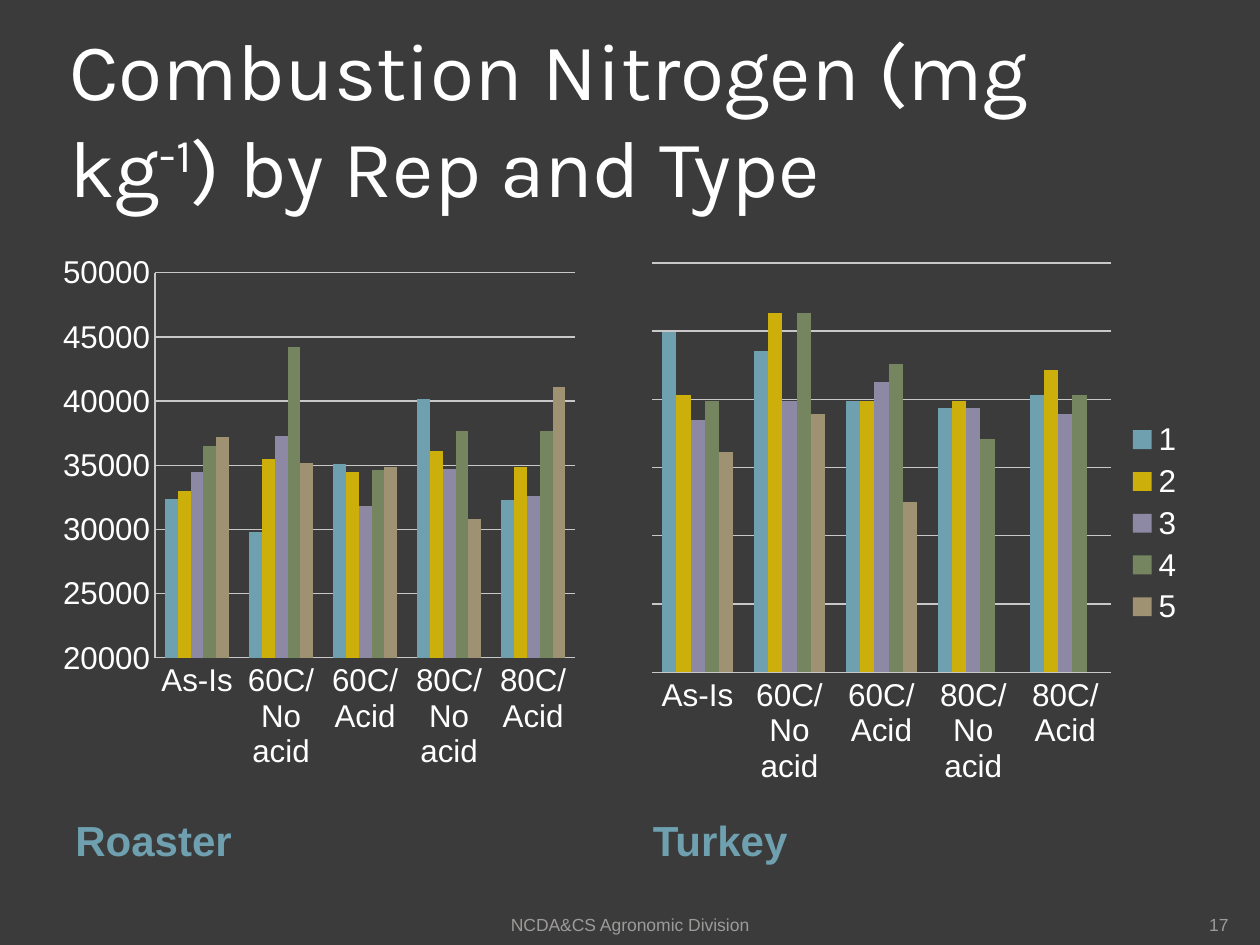
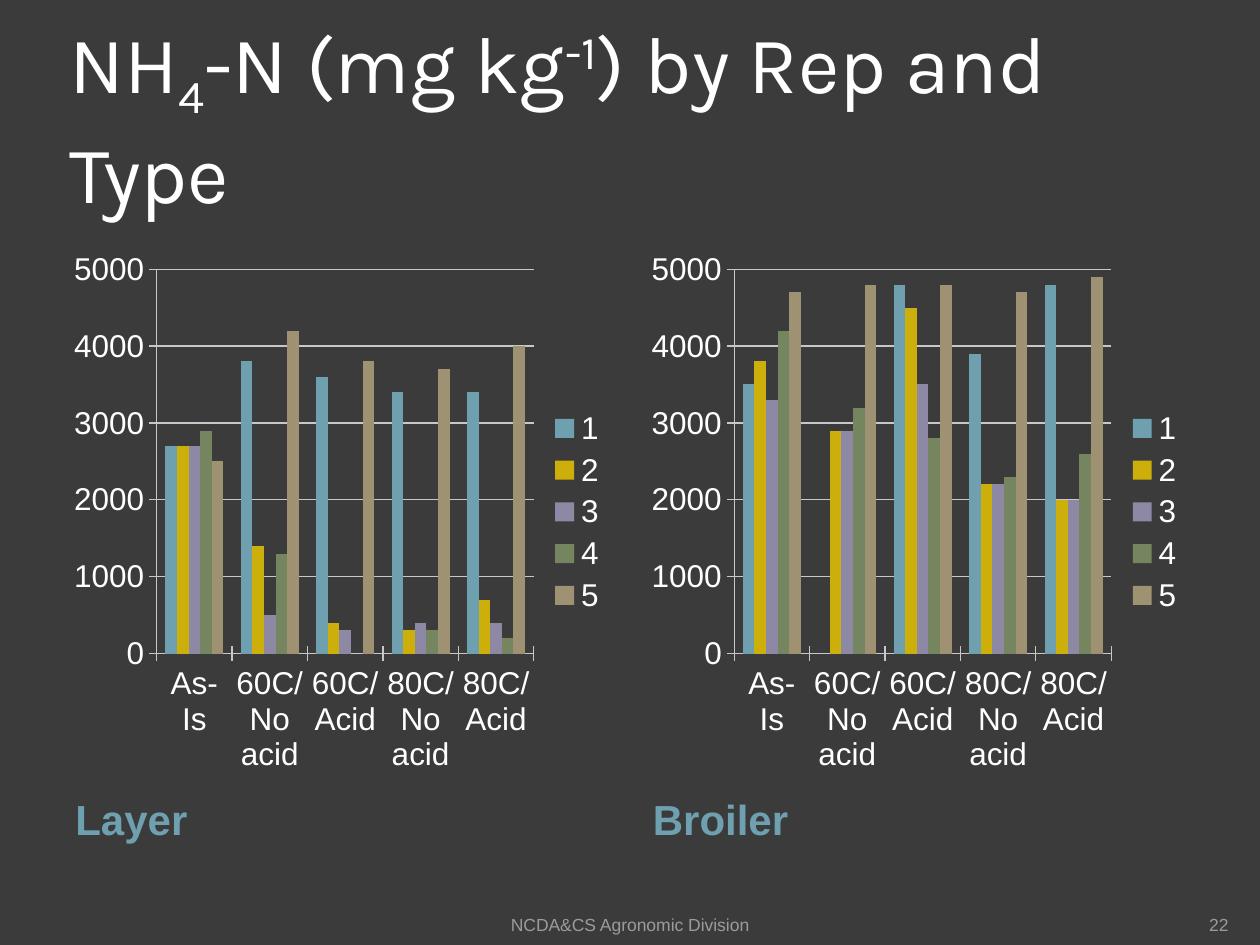
from lxml import etree
from pptx import Presentation
from pptx.chart.data import CategoryChartData
from pptx.dml.color import RGBColor
from pptx.enum.chart import XL_CHART_TYPE, XL_LEGEND_POSITION, XL_TICK_MARK
from pptx.enum.text import MSO_ANCHOR, PP_ALIGN
from pptx.util import Pt

COLUMNS = XL_CHART_TYPE.COLUMN_CLUSTERED
RIGHT_LEGEND = XL_LEGEND_POSITION.RIGHT
NO_TICK, CROSS = XL_TICK_MARK.NONE, XL_TICK_MARK.CROSS
TOP, MIDDLE, BOTTOM = MSO_ANCHOR.TOP, MSO_ANCHOR.MIDDLE, MSO_ANCHOR.BOTTOM
LEFT, CENTER, RIGHT = PP_ALIGN.LEFT, PP_ALIGN.CENTER, PP_ALIGN.RIGHT

BACK, WHITE, GREY, GRID = "3B3B3B", "FFFFFF", "9D9B9A", "C8C8C8"
REPS = ["6EA0B0", "CCAF0A", "8D89A4", "748560", "9E9273"]
TREATS = ["As-Is", "60C/No acid", "60C/Acid", "80C/No acid", "80C/Acid"]
COLS = (36, 366)
WIDTH = 318
CHART_H = 310

# One row per rep, one value per treatment
ROASTER = [
    (32400, 29800, 35100, 40200, 32300),
    (33000, 35500, 34500, 36100, 34900),
    (34500, 37300, 31800, 34700, 32600),
    (36500, 44200, 34600, 37700, 37700),
    (37200, 35200, 34900, 30800, 41100),
]
TURKEY = [
    (97, 94, 86, 85, 87),
    (87, 100, 86, 86, 91),
    (83, 86, 89, 85, 84),
    (86, 100, 92, 80, 87),
    (78, 84, 70, 0, 37),
]
LAYER = [
    (2700, 3800, 3600, 3400, 3400),
    (2700, 1400, 400, 300, 700),
    (2700, 500, 300, 400, 400),
    (2900, 1300, None, 300, 200),
    (2500, 4200, 3800, 3700, 4000),
]
BROILER = [
    (3500, None, 4800, 3900, 4800),
    (3800, 2900, 4500, 2200, 2000),
    (3300, 2900, 3500, 2200, 2000),
    (4200, 3200, 2800, 2300, 2600),
    (4700, 4800, 4800, 4700, 4900),
]


def color(code):
    return RGBColor.from_string(code)


def style(font, size, code, face="Arial", bold=False):
    font.name, font.size, font.bold = face, Pt(size), bold
    font.color.rgb = color(code)


def place(chart, x, y, w, h):
    """Fix the inner plot area, in fractions of the chart frame."""
    area = chart.plots[0]._element.getparent()
    space = etree.QName(area).namespace
    for old in area.findall(f"{{{space}}}layout"):
        area.remove(old)
    layout = etree.Element(f"{{{space}}}layout")
    area.insert(0, layout)
    manual = etree.SubElement(layout, f"{{{space}}}manualLayout")
    pairs = [("layoutTarget", "inner"), ("xMode", "edge"), ("yMode", "edge"),
             ("x", x), ("y", y), ("w", w), ("h", h)]
    for tag, val in pairs:
        etree.SubElement(manual, f"{{{space}}}{tag}").set("val", str(val))


class Deck:
    """Holds the shared style and the current slide."""

    def __init__(self):
        self.prs = Presentation()
        self.prs.slide_width, self.prs.slide_height = Pt(720), Pt(540)
        fill = self.prs.slide_master.background.fill
        fill.solid()
        fill.fore_color.rgb = color(BACK)
        self.slide = None

    def start(self, title, number):
        self.slide = self.prs.slides.add_slide(self.prs.slide_layouts[6])
        self.title(title)
        foot = {"anchor": BOTTOM, "size": 10, "code": GREY}
        self.text("NCDA&CS Agronomic Division", (246, 505.5, 228, 29),
                  (0, 3.6, 0, 0), align=CENTER, **foot)
        self.text(str(number), (642, 505.5, 60, 29), (0, 0, 0, 0),
                  align=RIGHT, **foot)

    def box(self, rect, inset, anchor):
        frame = self.slide.shapes.add_textbox(*map(Pt, rect)).text_frame
        frame.word_wrap = True
        frame.vertical_anchor = anchor
        (frame.margin_left, frame.margin_top,
         frame.margin_right, frame.margin_bottom) = map(Pt, inset)
        return frame

    def text(self, words, rect, inset, anchor, size, code, align, bold=False):
        frame = self.box(rect, inset, anchor)
        frame.text = words
        para = frame.paragraphs[0]
        para.alignment = align
        style(para.runs[0].font, size, code, bold=bold)
        return para

    def title(self, parts):
        """Parts are (words, baseline shift in percent)."""
        frame = self.box((36, 21.6, 648, 90), [3.6] * 4, MIDDLE)
        for words, shift in parts:
            run = frame.paragraphs[0].add_run()
            run.text = words
            style(run.font, 46, WHITE, "Karla")
            if shift:
                run._r.get_or_add_rPr().set("baseline", str(shift * 1000))

    def label(self, words, col, top):
        para = self.text(words, (COLS[col], top, WIDTH, 66),
                         (7.2, 3.6, 7.2, 3.6), TOP, 24, REPS[0], LEFT, True)
        para.space_before = Pt(4.8)

    def chart(self, rows, col, top, scale, tick=CROSS, legend=True,
              values=True, prefix=""):
        """Scale is (minimum, maximum, major unit)."""
        data = CategoryChartData(number_format="0")
        data.categories = TREATS
        for rep, row in enumerate(rows, 1):
            data.add_series(f"{prefix}{rep}", row)
        rect = (COLS[col], top, WIDTH, CHART_H)
        chart = self.slide.shapes.add_chart(
            COLUMNS, *map(Pt, rect), data).chart
        style(chart.font, 18, WHITE)
        chart.has_title = False
        chart.has_legend = legend
        if legend:
            chart.legend.position = RIGHT_LEGEND
            chart.legend.include_in_layout = False
        plot = chart.plots[0]
        plot.vary_by_categories = False
        plot.gap_width, plot.overlap = 150, 0
        for series, code in zip(plot.series, REPS):
            series.invert_if_negative = False
            series.format.fill.solid()
            series.format.fill.fore_color.rgb = color(code)
        side = chart.value_axis
        side.minimum_scale, side.maximum_scale, side.major_unit = scale
        side.has_major_gridlines = True
        side.visible = values
        for axis in (chart.category_axis, side):
            axis.major_tick_mark, axis.minor_tick_mark = tick, NO_TICK
        for item in (chart.category_axis, side, side.major_gridlines):
            item.format.line.color.rgb = color(GRID)
            item.format.line.width = Pt(0.75)
        return chart


def main():
    deck = Deck()

    deck.start([("Combustion Nitrogen (mg kg", 0), ("-1", 30),
                (") by Rep and Type", 0)], 17)
    deck.label("Roaster", 0, 462)
    deck.label("Turkey", 1, 462)
    deck.chart(TURKEY, 1, 144, (43, 108, 10.83), NO_TICK, values=False)
    roaster = deck.chart(ROASTER, 0, 143.5, (20000, 50000, 5000), NO_TICK,
                         legend=False, prefix="Series ")
    place(roaster, 0.16, 0.04, 0.76, 0.71)

    deck.start([("NH", 0), ("4", -25), ("-N (mg kg", 0), ("-1", 30),
                (") by Rep and Type", 0)], 22)
    pairs = [("Layer", LAYER), ("Broiler", BROILER)]
    for col, (name, rows) in enumerate(pairs):
        deck.label(name, col, 450)
        deck.chart(rows, col, 137.5, (0, 5000, 1000))

    deck.prs.save("out.pptx")


if __name__ == "__main__":
    main()
